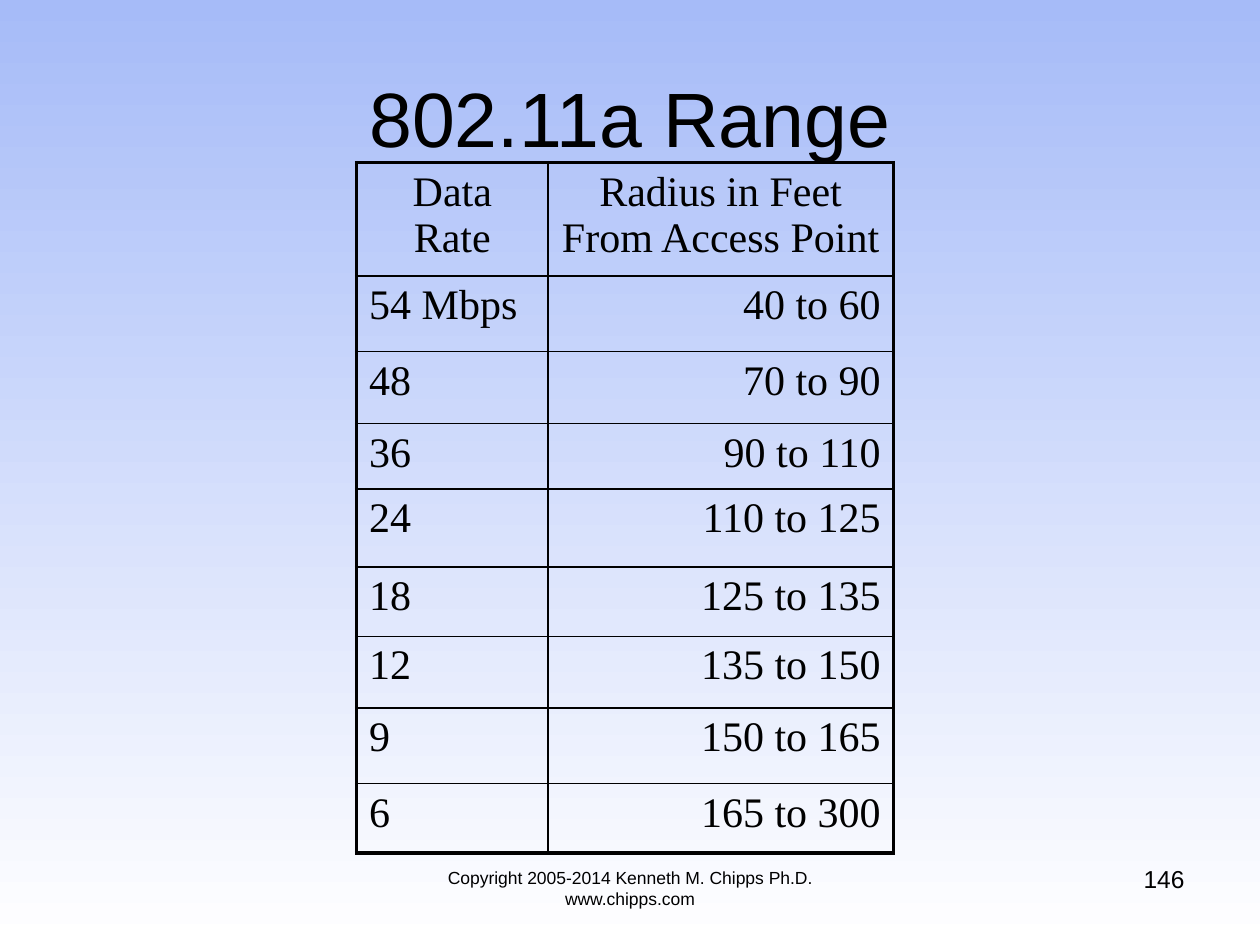
from lxml.etree import SubElement
from pptx import Presentation
from pptx.dml.color import RGBColor
from pptx.enum.text import MSO_ANCHOR, PP_ALIGN
from pptx.oxml.ns import qn
from pptx.util import Inches, Pt

# Content
TITLE = "802.11a Range"
HEADER = ("Data Rate", "Radius in Feet\vFrom Access Point")
RANGES = [
    ("54 Mbps", "40 to 60"),
    ("48", "70 to 90"),
    ("36", "90 to 110"),
    ("24", "110 to 125"),
    ("18", "125 to 135"),
    ("12", "135 to 150"),
    ("9", "150 to 165"),
    ("6", "165 to 300"),
]
FOOTER = "Copyright 2005-2014 Kenneth M. Chipps Ph.D. www.chipps.com"
SLIDE_NUMBER = "146"

# Look and layout, in inches and points
COLORS = {"top": "A6BBF8", "bottom": "FFFFFF", "ink": "000000"}
WIDTH, HEIGHT = 10, 7.5
TABLE_LEFT, TABLE_TOP = 2.83, 1.29
COLUMN_WIDTHS = (1.52, 2.74)
ROW_HEIGHTS = (0.9, 0.6, 0.57, 0.52, 0.62, 0.55, 0.57, 0.6, 0.55)
OUTER_LINE, INNER_LINE = 2.25, 1


def format_text(text_frame, size, font, alignment):
    for paragraph in text_frame.paragraphs:
        paragraph.alignment = alignment
        for run in paragraph.runs:
            run.font.size = Pt(size)
            run.font.name = font
            run.font.color.rgb = RGBColor.from_string(COLORS["ink"])


def add_text(slide, text, box, size, alignment, anchor=MSO_ANCHOR.TOP):
    shape = slide.shapes.add_textbox(*map(Inches, box))
    text_frame = shape.text_frame
    text_frame.word_wrap = True
    text_frame.vertical_anchor = anchor
    text_frame.text = text
    format_text(text_frame, size, "Arial", alignment)


def add_border(cell, side, width):
    properties = cell._tc.get_or_add_tcPr()
    line = SubElement(properties, qn(f"a:ln{side}"), w=str(Pt(width)))
    fill = SubElement(line, qn("a:solidFill"))
    SubElement(fill, qn("a:srgbClr"), val=COLORS["ink"])


def add_range_table(slide):
    rows = [HEADER, *RANGES]
    last_row, last_column = len(rows) - 1, len(HEADER) - 1
    box = (TABLE_LEFT, TABLE_TOP, sum(COLUMN_WIDTHS), sum(ROW_HEIGHTS))
    table = slide.shapes.add_table(
        len(rows), len(HEADER), *map(Inches, box)).table
    table.first_row = table.horz_banding = False
    for column, width in zip(table.columns, COLUMN_WIDTHS):
        column.width = Inches(width)
    for row, height in zip(table.rows, ROW_HEIGHTS):
        row.height = Inches(height)

    for row_index, values in enumerate(rows):
        for column_index, value in enumerate(values):
            cell = table.cell(row_index, column_index)
            cell.text_frame.text = value
            if row_index == 0:
                alignment = PP_ALIGN.CENTER
            else:
                alignment = (PP_ALIGN.LEFT, PP_ALIGN.RIGHT)[column_index]
            format_text(cell.text_frame, 24, "Times New Roman", alignment)
            # Heavy frame around the table, thin lines inside
            outer_sides = {
                "L": column_index == 0,
                "R": column_index == last_column,
                "T": row_index == 0,
                "B": row_index == last_row,
            }
            for side, is_outer in outer_sides.items():
                add_border(cell, side, OUTER_LINE if is_outer else INNER_LINE)
            cell.fill.background()


def main():
    presentation = Presentation()
    presentation.slide_width = Inches(WIDTH)
    presentation.slide_height = Inches(HEIGHT)
    slide = presentation.slides.add_slide(presentation.slide_layouts[6])

    # Background, shaded from top to bottom
    background = slide.background.fill
    background.gradient()
    background.gradient_angle = 270
    for stop, position, name in zip(
            background.gradient_stops, (0, 1), ("top", "bottom")):
        stop.position = position
        stop.color.rgb = RGBColor.from_string(COLORS[name])

    # Title, table and footer
    add_text(slide, TITLE, (0.5, 0.3, 9, 1.25), 44, PP_ALIGN.CENTER,
             MSO_ANCHOR.MIDDLE)
    add_range_table(slide)
    add_text(slide, SLIDE_NUMBER, (7.17, 6.81, 2.33, 0.52), 14, PP_ALIGN.RIGHT)
    add_text(slide, FOOTER, (3, 6.83, 4, 0.52), 10, PP_ALIGN.CENTER)

    presentation.save("out.pptx")


if __name__ == "__main__":
    main()
